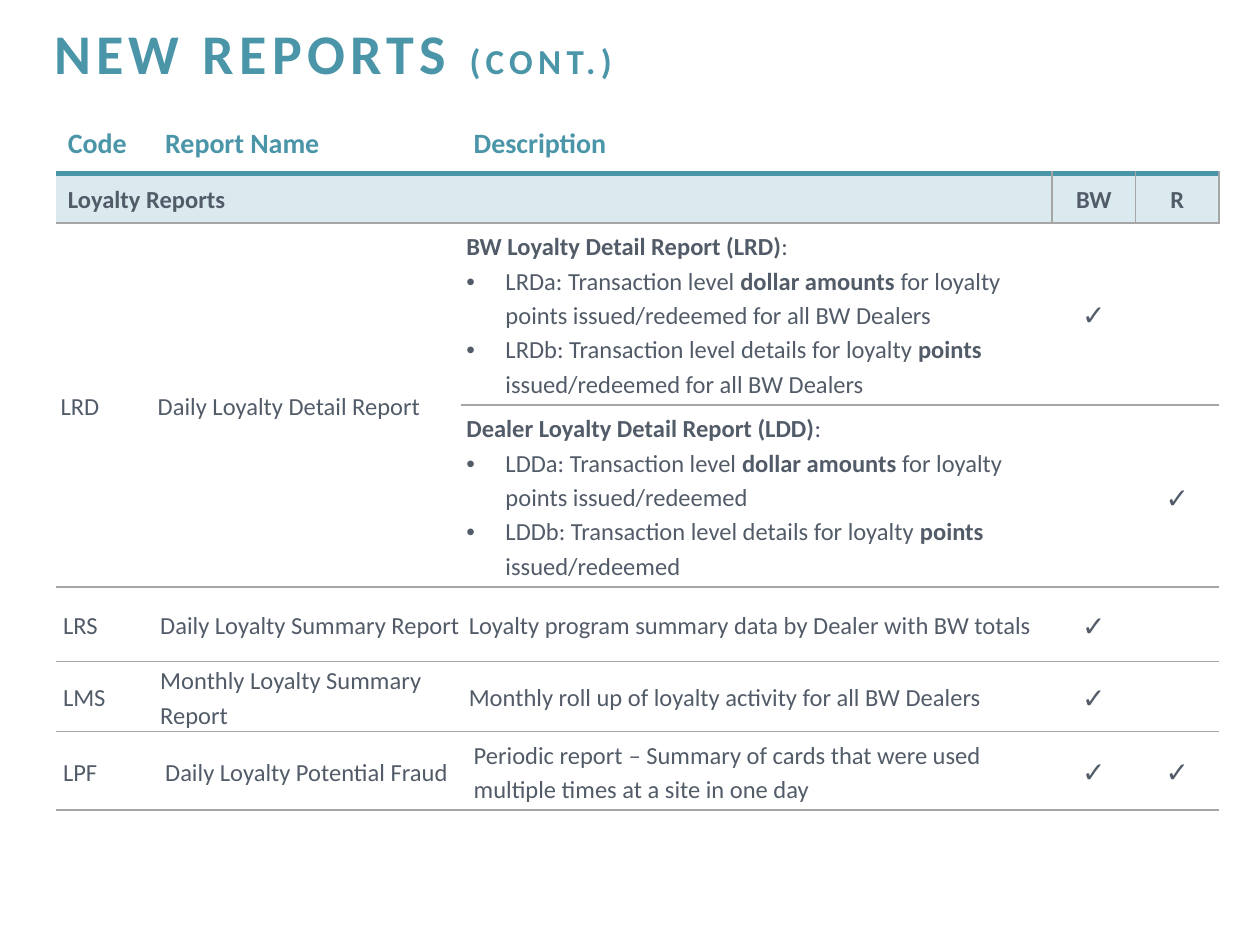
"""Builds the slide that lists the new loyalty reports."""
from dataclasses import dataclass

from lxml import etree
from pptx import Presentation
from pptx.dml.color import RGBColor
from pptx.enum.text import MSO_ANCHOR, MSO_AUTO_SIZE, PP_ALIGN
from pptx.oxml.ns import qn
from pptx.util import Cm, Pt

TOP, MIDDLE, BOTTOM = MSO_ANCHOR.TOP, MSO_ANCHOR.MIDDLE, MSO_ANCHOR.BOTTOM
LEFT, CENTER = PP_ALIGN.LEFT, PP_ALIGN.CENTER
NO_FIT = MSO_AUTO_SIZE.NONE
PLAIN_TABLE = "{2D5ABB26-0587-4C30-8999-92F81FD0307C}"


@dataclass(frozen=True)
class Theme:
    font: str = "Calibri"
    teal: str = "4B95A9"
    slate: str = "525B68"
    band: str = "DAEAEF"
    rule: str = "A6A6A6"
    title: int = 32
    subtitle: int = 20
    heading: int = 16
    body: int = 14
    tick: int = 16


COLUMNS = [1.96, 6.22, 11.91, 1.68, 1.68]
ROWS = [1.19, 0.99, 3.67, 3.67, 1.5, 1.41, 1.57]
HEADINGS = ["Code", "Report Name", "Description"]
BAND = {0: "Loyalty Reports", 3: "BW", 4: "R"}
DETAILS = [
    ["*BW Loyalty Detail Report (LRD)*:",
     "LRDa: Transaction level *dollar amounts *for loyalty points issued/redeemed for all BW Dealers",
     "LRDb: Transaction level details for loyalty *points *issued/redeemed for all BW Dealers"],
    ["*Dealer Loyalty Detail Report (LDD)*:",
     "LDDa: Transaction level *dollar amounts *for loyalty points issued/redeemed",
     "LDDb: Transaction level details for loyalty *points *issued/redeemed"],
]
REPORTS = [
    ("LRS", "Daily Loyalty Summary Report",
     "Loyalty program summary data by Dealer with BW totals"),
    ("LMS", "Monthly Loyalty Summary Report",
     "Monthly roll up of loyalty activity for all BW Dealers"),
    ("LPF", "Daily Loyalty Potential Fraud",
     "Periodic report _– _Summary of cards that were used multiple times at a site in one day"),
]
TICKS = [(2, 3), (3, 4), (4, 3), (5, 3), (6, 3), (6, 4)]


def write(p, text, font, size, color, bold=False, spacing=0, align=LEFT, line=1.15,
          gap=0, indent=0, bullet=False):
    """Adds text to a paragraph; *...* toggles bold and _..._ toggles italic."""
    p.alignment, p.line_spacing = align, line
    p.space_before = p.space_after = Pt(gap)
    pPr = p._p.get_or_add_pPr()
    pPr.set("marL", str(Cm(indent)))
    pPr.set("indent", str(-Cm(indent) if bullet else 0))
    if bullet:
        etree.SubElement(pPr, qn("a:buFont"), typeface="Arial")
        etree.SubElement(pPr, qn("a:buChar"), char="•")
    for i, strong in enumerate(text.split("*")):
        for j, part in enumerate(strong.split("_")):
            if not part:
                continue
            r = p.add_run()
            r.text = part
            r.font.name, r.font.size = font, Pt(size)
            r.font.bold, r.font.italic = bold != bool(i % 2), bool(j % 2)
            r.font.color.rgb = RGBColor.from_string(color)
            if spacing:
                r._r.get_or_add_rPr().set("spc", str(spacing * 100))


class Deck:
    """Holds the theme and the current slide."""

    def __init__(self, prs, theme):
        self.theme = theme
        self.s = prs.slides.add_slide(prs.slide_layouts[5])

    def title(self, text, suffix, left, top, width, height):
        """Places and fills the title."""
        t, sp = self.theme, self.s.shapes.title
        sp.left, sp.top, sp.width, sp.height = map(Cm, (left, top, width, height))
        tf = sp.text_frame
        tf.auto_size, tf.vertical_anchor, tf.word_wrap = NO_FIT, TOP, True
        for part, size in ((text, t.title), (suffix, t.subtitle)):
            write(tf.paragraphs[0], part, t.font, size, t.teal,
                  bold=True, spacing=3, line=0.8)

    def table(self, left, top, columns, rows):
        """Adds an unstyled table."""
        frame = self.s.shapes.add_table(len(rows), len(columns), Cm(left), Cm(top),
                                        Cm(sum(columns)), Cm(sum(rows)))
        tbl = frame.table
        tbl.first_row = tbl.horz_banding = False
        tbl._tbl.tblPr.find(qn("a:tableStyleId")).text = PLAIN_TABLE
        for column, width in zip(tbl.columns, columns):
            column.width = Cm(width)
        for row, height in zip(tbl.rows, rows):
            row.height = Cm(height)
        return tbl

    def cell(self, cell, lines, inset=0.1, pad=0.1, anchor=MIDDLE, bullets=False, **style):
        """Fills a cell, bulleting every line after the first when asked."""
        t = self.theme
        cell.margin_left = cell.margin_right = Cm(inset)
        cell.margin_top = cell.margin_bottom = Cm(pad)
        cell.vertical_anchor = anchor
        style = {"font": t.font, "size": t.body, "color": t.slate, **style}
        tf = cell.text_frame
        for i, line in enumerate(lines):
            p = tf.add_paragraph() if i else tf.paragraphs[0]
            dotted = {"bullet": True, "indent": 0.79} if bullets and i else {}
            write(p, line, **{**style, **dotted})

    def border(self, cell, side, color, width):
        """Draws one cell border; sides go in the order L, R, T, B."""
        ln = etree.SubElement(cell._tc.get_or_add_tcPr(), qn(f"a:ln{side}"),
                              w=str(Pt(width)))
        fill = etree.SubElement(ln, qn("a:solidFill"))
        etree.SubElement(fill, qn("a:srgbClr"), val=color)

    def fill(self, cell, color):
        """Gives a cell a solid fill."""
        cell.fill.solid()
        cell.fill.fore_color.rgb = RGBColor.from_string(color)


def main():
    """Builds and saves the slide."""
    prs = Presentation()
    prs.slide_width, prs.slide_height = Cm(25.4), Cm(19.05)
    theme = Theme()
    deck = Deck(prs, theme)
    deck.title("NEW REPORTS ", "(CONT.)", 0.84, 0.51, 24.46, 2.41)
    tbl = deck.table(1.12, 2.31, COLUMNS, ROWS)

    for row in range(len(ROWS)):
        for col in range(len(COLUMNS)):
            cell = tbl.cell(row, col)
            if row == 1:
                if col > 2:
                    deck.border(cell, "L", theme.rule, 1)
                if col in (2, 3):
                    deck.border(cell, "R", theme.rule, 1)
                deck.border(cell, "T", theme.teal, 3)
            if row == 0:
                deck.border(cell, "B", theme.teal, 3)
            else:
                deck.border(cell, "B", theme.rule, 1)
            if row == 1:
                deck.fill(cell, theme.band)

    tbl.cell(1, 0).merge(tbl.cell(1, 2))
    for col in (0, 1):
        tbl.cell(2, col).merge(tbl.cell(3, col))

    for col, text in enumerate(HEADINGS):
        deck.cell(tbl.cell(0, col), [text], inset=0.25, pad=0.25, anchor=BOTTOM,
                  size=theme.heading, color=theme.teal, bold=True, line=1)
    for col, text in BAND.items():
        deck.cell(tbl.cell(1, col), [text], inset=0.25, bold=True,
                  align=CENTER if col else LEFT)
    for col, text in enumerate(("LRD", "Daily Loyalty Detail Report")):
        deck.cell(tbl.cell(2, col), [text])
    for row, lines in enumerate(DETAILS, 2):
        deck.cell(tbl.cell(row, 2), lines, bullets=True)
    for row, report in enumerate(REPORTS, 4):
        for col, text in enumerate(report):
            margin = 0.1 if row == 6 and col else 0
            deck.cell(tbl.cell(row, col), [text], inset=margin, pad=margin,
                      indent=0.15, gap=3)
    for row, col in TICKS:
        deck.cell(tbl.cell(row, col), ["✓"], size=theme.tick, align=CENTER)
    prs.save("out.pptx")


if __name__ == "__main__":
    main()
